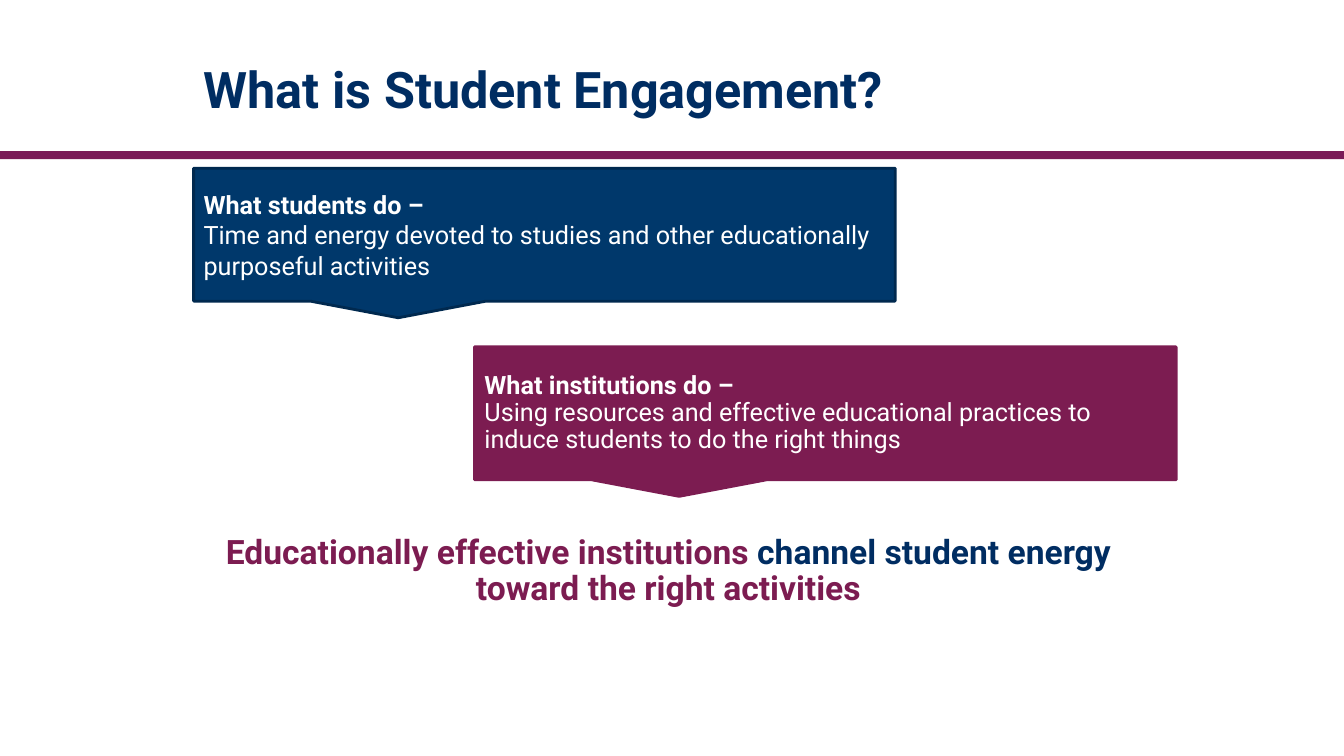
from dataclasses import dataclass

from pptx import Presentation
from pptx.dml.color import RGBColor
from pptx.enum.shapes import MSO_SHAPE
from pptx.enum.text import MSO_ANCHOR, PP_ALIGN
from pptx.shapes.autoshape import Shape
from pptx.slide import Slide
from pptx.util import Cm, Pt

RECTANGLE = MSO_SHAPE.RECTANGLE
CALLOUT = MSO_SHAPE.RECTANGULAR_CALLOUT
TOP, MIDDLE = MSO_ANCHOR.TOP, MSO_ANCHOR.MIDDLE
LEFT, CENTER = PP_ALIGN.LEFT, PP_ALIGN.CENTER

FONT = "Roboto"
NAVY = RGBColor(0x00, 0x2D, 0x62)
BLUE = RGBColor(0x00, 0x38, 0x6B)
DARK_BLUE = RGBColor(0x00, 0x29, 0x4F)
PLUM = RGBColor(0x7C, 0x1C, 0x51)
RULE_PLUM = RGBColor(0x7A, 0x1A, 0x57)
WHITE = RGBColor(0xFF, 0xFF, 0xFF)

PAGE_WIDTH, PAGE_HEIGHT = Cm(33.87), Cm(19.05)
MARGIN = 4.88
CALLOUT_WIDTH, CALLOUT_HEIGHT = Cm(17.68), Cm(3.35)


@dataclass(frozen=True)
class Span:
    text: str
    color: RGBColor


@dataclass(frozen=True)
class Statement:
    left: float
    top: float
    width: float
    height: float
    size: float
    anchor: MSO_ANCHOR
    align: PP_ALIGN
    line_spacing: float
    spans: tuple[Span, ...]


@dataclass(frozen=True)
class Callout:
    left: float
    top: float
    fill: RGBColor
    line: RGBColor
    line_spacing: float
    heading: str
    detail: str


STATEMENTS = (
    Statement(MARGIN, 0.64, 24.77, 3.18, 36, MIDDLE, LEFT, 1.0,
              (Span("What is Student Engagement?", NAVY),)),
    Statement(MARGIN, 13.36, 23.93, 3.35, 24, TOP, CENTER, 0.9,
              (Span("Educationally effective institutions ", PLUM),
               Span("channel student energy ", NAVY),
               Span("toward the right activities", PLUM))),
)

CALLOUTS = (
    Callout(MARGIN, 4.24, BLUE, DARK_BLUE, 1.0, "What students do –",
            "Time and energy devoted to studies and other educationally purposeful activities"),
    Callout(11.96, 8.74, PLUM, PLUM, 0.9, "What institutions do –",
            "Using resources and effective educational practices to "
            "induce students to do the right things"),
)


def add_rule(page: Slide) -> None:
    rule: Shape = page.shapes.add_shape(RECTANGLE, 0, Cm(3.81), PAGE_WIDTH, Cm(0.2))
    rule.shadow.inherit = False
    rule.fill.solid()
    rule.fill.fore_color.rgb = RULE_PLUM
    rule.line.fill.background()


def add_statement(page: Slide, statement: Statement) -> None:
    box = page.shapes.add_textbox(Cm(statement.left), Cm(statement.top),
                                  Cm(statement.width), Cm(statement.height))
    frame = box.text_frame
    frame.word_wrap = True
    frame.vertical_anchor = statement.anchor
    paragraph = frame.paragraphs[0]
    paragraph.alignment = statement.align
    paragraph.line_spacing = statement.line_spacing
    paragraph.font.name = FONT
    paragraph.font.size = Pt(statement.size)
    paragraph.font.bold = True
    for span in statement.spans:
        run = paragraph.add_run()
        run.text = span.text
        run.font.color.rgb = span.color


def add_callout(page: Slide, callout: Callout) -> None:
    box: Shape = page.shapes.add_shape(CALLOUT, Cm(callout.left), Cm(callout.top),
                                       CALLOUT_WIDTH, CALLOUT_HEIGHT)
    box.shadow.inherit = False
    box.fill.solid()
    box.fill.fore_color.rgb = callout.fill
    box.line.color.rgb = callout.line
    box.line.width = Pt(2)
    frame = box.text_frame
    frame.word_wrap = True
    frame.vertical_anchor = MIDDLE
    frame.text = f"{callout.heading}\n{callout.detail}"
    for paragraph, bold in zip(frame.paragraphs, (True, False)):
        paragraph.alignment = LEFT
        paragraph.line_spacing = callout.line_spacing
        paragraph.font.name = FONT
        paragraph.font.size = Pt(18)
        paragraph.font.bold = bold
        paragraph.font.color.rgb = WHITE


def main() -> None:
    deck = Presentation()
    deck.slide_width, deck.slide_height = PAGE_WIDTH, PAGE_HEIGHT
    page = deck.slides.add_slide(deck.slide_layouts[6])
    add_rule(page)
    for statement in STATEMENTS:
        add_statement(page, statement)
    for callout in CALLOUTS:
        add_callout(page, callout)
    deck.save("out.pptx")


if __name__ == "__main__":
    main()
